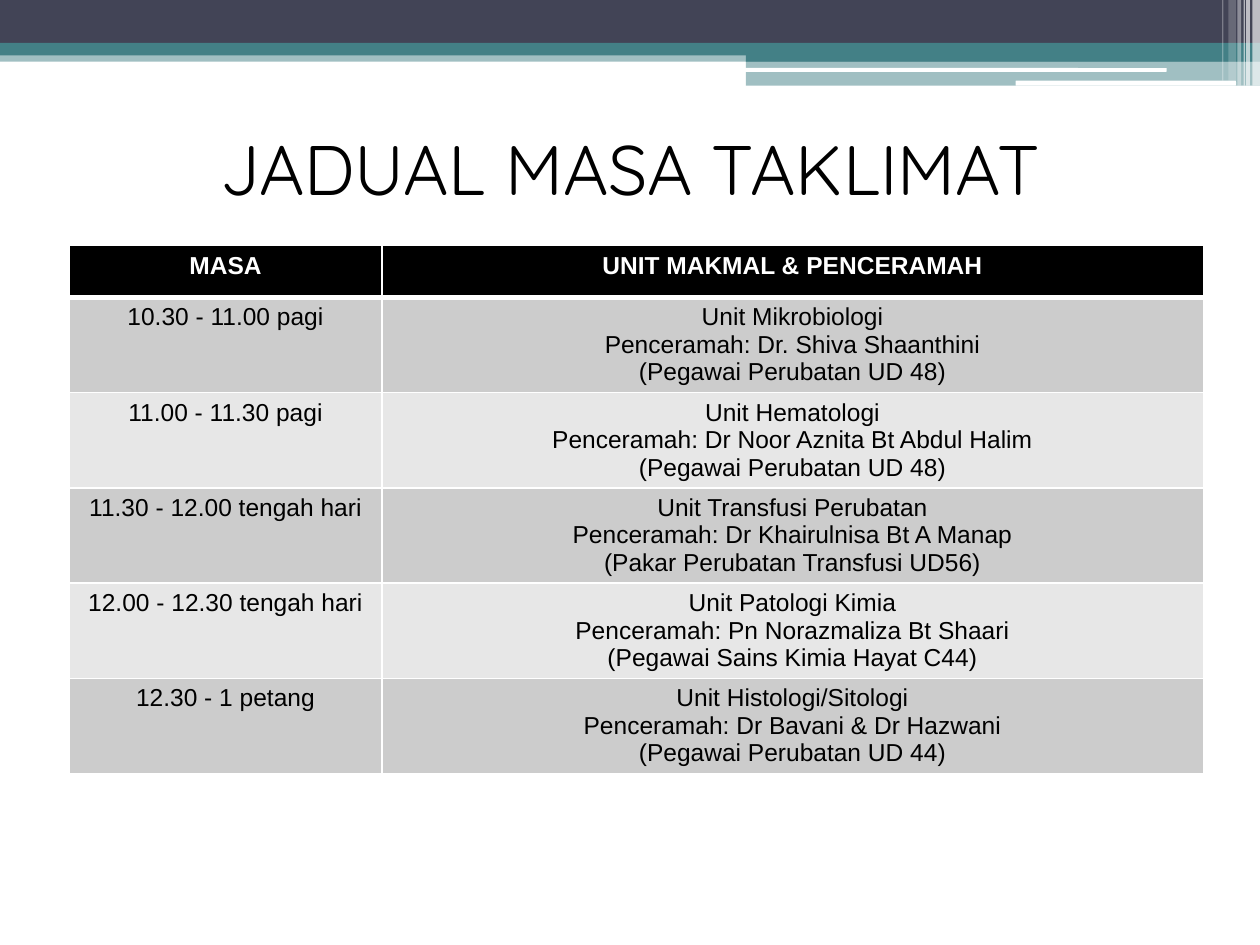
import lxml.etree
import pptx
import pptx.dml.color
import pptx.enum.shapes
import pptx.enum.text
import pptx.oxml.ns
import pptx.util

Inches = pptx.util.Inches
Pt = pptx.util.Pt
qn = pptx.oxml.ns.qn
SHAPE = pptx.enum.shapes.MSO_SHAPE
ALIGN = pptx.enum.text.PP_ALIGN
ANCHOR = pptx.enum.text.MSO_ANCHOR

HUES = {
    "dark": "424456",
    "teal": "438086",
    "white": "FFFFFF",
    "black": "000000",
    "grey": "CCCCCC",
    "pale": "E7E7E7",
}

BANDS = [
    (0, 0.4, 10, 0.09, "teal", 50),
    (0, 0, 10, 0.34, "dark", 100),
    (0, 0.34, 10, 0.1, "teal", 100),
    (5.92, 0.39, 4.08, 0.1, "teal", 100),
    (5.92, 0.48, 4.08, 0.2, "teal", 50),
]
LINES = [(5.91, 0.54, 3.35, 0.03), (8.06, 0.64, 1.75, 0.04)]
STRIPES = [
    (9.94, 0.06, 0.68, 65),
    (9.89, 0.03, 0.68, 65),
    (9.87, 0.01, 0.68, 60),
    (9.82, 0.03, 0.68, 40),
    (9.75, 0.06, 0.64, 20),
    (9.7, 0.01, 0.64, 30),
]

ROWS = [
    ("MASA", "UNIT MAKMAL & PENCERAMAH"),
    ("10.30 - 11.00 pagi",
     "Unit Mikrobiologi\nPenceramah: Dr. Shiva Shaanthini\n(Pegawai Perubatan UD 48)"),
    ("11.00 - 11.30 pagi",
     "Unit Hematologi\nPenceramah: Dr Noor Aznita Bt Abdul Halim\n(Pegawai Perubatan UD 48)"),
    ("11.30 - 12.00 tengah hari",
     "Unit Transfusi Perubatan\nPenceramah: Dr Khairulnisa Bt A Manap\n(Pakar Perubatan Transfusi UD56)"),
    ("12.00 - 12.30 tengah hari",
     "Unit Patologi Kimia\nPenceramah: Pn Norazmaliza Bt Shaari\n(Pegawai Sains Kimia Hayat C44)"),
    ("12.30 - 1 petang",
     "Unit Histologi/Sitologi\nPenceramah: Dr Bavani & Dr Hazwani\n(Pegawai Perubatan UD 44)"),
]


def tint(name):
    return pptx.dml.color.RGBColor.from_string(HUES[name])


def write(frame, text, size=14, face="Arial", hue="black", bold=False):
    frame.text = text
    for para in frame.paragraphs:
        para.alignment = ALIGN.CENTER
        for run in para.runs:
            run.font.size = Pt(size)
            run.font.name = face
            run.font.bold = bold
            run.font.color.rgb = tint(hue)


class Deck:
    def __init__(self):
        self.show = pptx.Presentation()
        self.show.slide_width = Inches(10)
        self.show.slide_height = Inches(7.5)
        self.slide = self.show.slides.add_slide(self.show.slide_layouts[5])

    def title(self, text, left, top, width, height):
        box = self.slide.shapes.title
        box.left, box.top = Inches(left), Inches(top)
        box.width, box.height = Inches(width), Inches(height)
        box.text_frame.vertical_anchor = ANCHOR.MIDDLE
        write(box.text_frame, text, size=40, face="Quicksand")

    def bar(self, left, top, width, height, hue, alpha=100, kind=SHAPE.RECTANGLE):
        bar = self.slide.shapes.add_shape(
            kind, Inches(left), Inches(top), Inches(width), Inches(height))
        bar.shadow.inherit = False
        bar.fill.solid()
        bar.fill.fore_color.rgb = tint(hue)
        bar.line.fill.background()
        if alpha < 100:
            clr = bar.fill._xPr.find(qn("a:solidFill"))[0]
            lxml.etree.SubElement(clr, qn("a:alpha"), val=str(alpha * 1000))

    def edge(self, cell, widths):
        props = cell._tc.get_or_add_tcPr()
        for side, width in zip("LRTB", widths):
            line = lxml.etree.SubElement(props, qn("a:ln" + side), w=str(Pt(width)))
            fill = lxml.etree.SubElement(line, qn("a:solidFill"))
            lxml.etree.SubElement(fill, qn("a:srgbClr"), val=HUES["white"])

    def table(self, rows, left, top, cols, head, body):
        high = head + body * (len(rows) - 1)
        grid = self.slide.shapes.add_table(
            len(rows), len(cols), Inches(left), Inches(top),
            Inches(sum(cols)), Inches(high)).table
        for col, width in zip(grid.columns, cols):
            col.width = Inches(width)
        for i, row in enumerate(rows):
            first = i == 0
            grid.rows[i].height = Inches(head if first else body)
            back = "black" if first else ("grey" if i % 2 else "pale")
            for j, text in enumerate(row):
                cell = grid.cell(i, j)
                self.edge(cell, (1, 1, 3 if i == 1 else 1, 3 if first else 1))
                cell.fill.solid()
                cell.fill.fore_color.rgb = tint(back)
                write(cell.text_frame, text, bold=first,
                      hue="white" if first else "black")


def main():
    deck = Deck()
    for band in BANDS:
        deck.bar(*band)
    for line in LINES:
        deck.bar(*line, "white", kind=SHAPE.ROUNDED_RECTANGLE)
    for left, width, height, alpha in STRIPES:
        deck.bar(left, 0, width, height, "white", alpha)
    deck.title("JADUAL MASA TAKLIMAT", 0.5, 0.86, 9, 0.94)
    deck.table(ROWS, 0.55, 1.95, (2.48, 6.52), 0.41, 0.75)
    deck.show.save("out.pptx")


if __name__ == "__main__":
    main()
